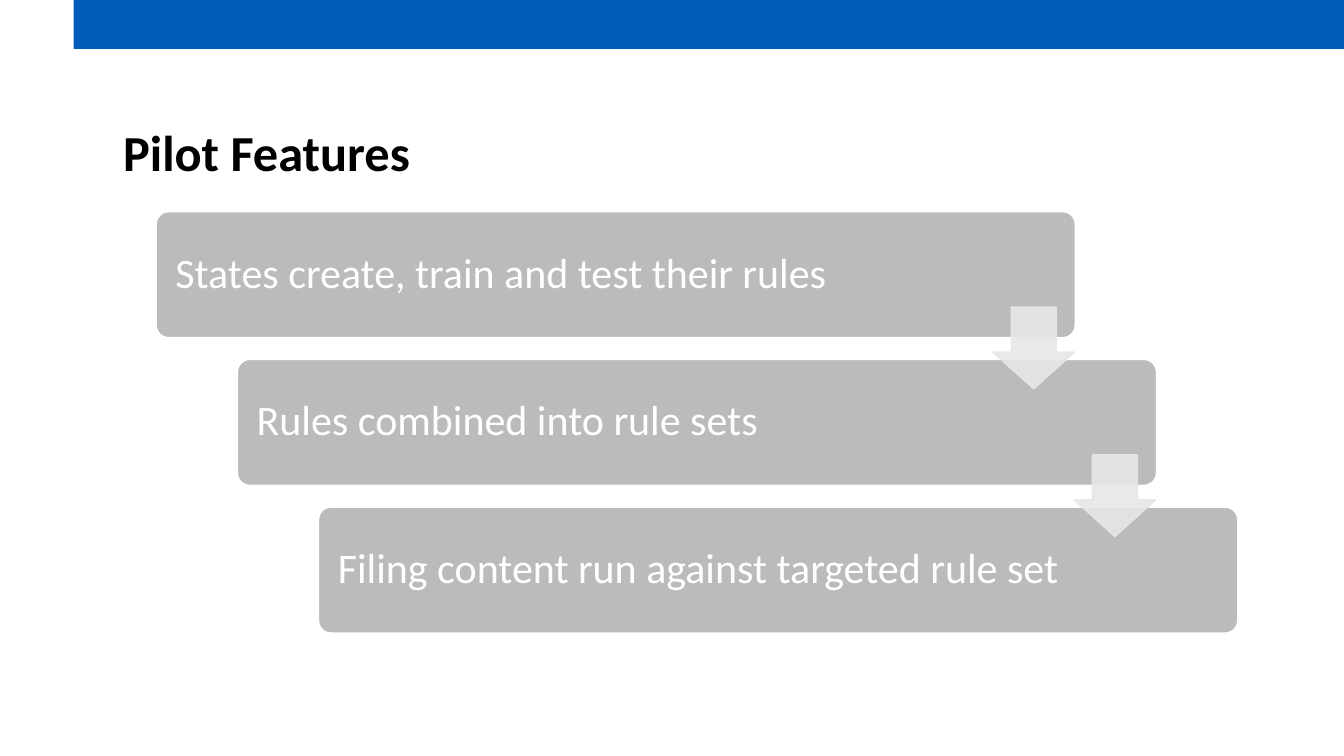
from lxml.etree import SubElement
from pptx import Presentation
from pptx.dml.color import RGBColor
from pptx.enum.shapes import MSO_SHAPE
from pptx.enum.text import MSO_ANCHOR, PP_ALIGN
from pptx.oxml.ns import qn
from pptx.util import Pt

BLUE = RGBColor(0x00, 0x5C, 0xB9)
BLACK = RGBColor(0x00, 0x00, 0x00)
WHITE = RGBColor(0xFF, 0xFF, 0xFF)
BAR_GREY = RGBColor(0xBB, 0xBB, 0xBB)
ARROW_GREY = RGBColor(0xE7, 0xE7, 0xE7)

STEPS = [
    "States create, train and test their rules",
    "Rules combined into rule sets",
    "Filing content run against targeted rule set",
]
BAR_LEFT, BAR_TOP, BAR_WIDTH, BAR_HEIGHT = 111.5, 151.2, 656.6, 90
SHIFT_X, SHIFT_Y = 58, 105.5
ARROW_LEFT, ARROW_TOP, ARROW_SIZE = 709.2, 219.4, 58.4


def add_block(page, kind, left, top, width, height, fill, line=None):
    block = page.shapes.add_shape(kind, Pt(left), Pt(top), Pt(width), Pt(height))
    block.shadow.inherit = False
    block.fill.solid()
    block.fill.fore_color.rgb = fill
    if line is None:
        block.line.fill.background()
    else:
        block.line.color.rgb = line
        block.line.width = Pt(1)
    return block


def write_text(box, text, size, color, bold=False):
    frame = box.text_frame
    frame.word_wrap = True
    para = frame.paragraphs[0]
    para.alignment = PP_ALIGN.LEFT
    para.line_spacing = 0.9
    span = para.add_run()
    span.text = text
    span.font.name = "Calibri"
    span.font.size = Pt(size)
    span.font.bold = bold
    span.font.color.rgb = color
    return frame


deck = Presentation()
deck.slide_width, deck.slide_height = Pt(960), Pt(540)
page = deck.slides.add_slide(deck.slide_layouts[5])

# Top band
add_block(page, MSO_SHAPE.RECTANGLE, 52.6, 0, 907.4, 35, BLUE)

# Title
title = page.shapes.title
title.left, title.top, title.width, title.height = Pt(88), Pt(88), Pt(872), Pt(42.5)
frame = write_text(title, "Pilot Features", 36, BLACK, bold=True)
frame.vertical_anchor = MSO_ANCHOR.BOTTOM
frame.margin_left = frame.margin_top = frame.margin_right = frame.margin_bottom = 0

# Staggered step bars
for index, step in enumerate(STEPS):
    bar = add_block(page, MSO_SHAPE.ROUNDED_RECTANGLE,
                    BAR_LEFT + index * SHIFT_X, BAR_TOP + index * SHIFT_Y,
                    BAR_WIDTH, BAR_HEIGHT, BAR_GREY, WHITE)
    bar.adjustments[0] = 0.1
    frame = write_text(bar, step, 30, WHITE)
    frame.vertical_anchor = MSO_ANCHOR.MIDDLE
    frame.margin_left = Pt(11.2)

# Translucent arrows between the bars
for index in range(len(STEPS) - 1):
    arrow = add_block(page, MSO_SHAPE.DOWN_ARROW,
                      ARROW_LEFT + index * SHIFT_X, ARROW_TOP + index * SHIFT_Y,
                      ARROW_SIZE, ARROW_SIZE, ARROW_GREY, ARROW_GREY)
    arrow.adjustments[0] = 0.55
    arrow.adjustments[1] = 0.45
    for color in arrow.element.spPr.iter(qn("a:srgbClr")):
        SubElement(color, qn("a:alpha"), val="90000")

deck.save("out.pptx")
